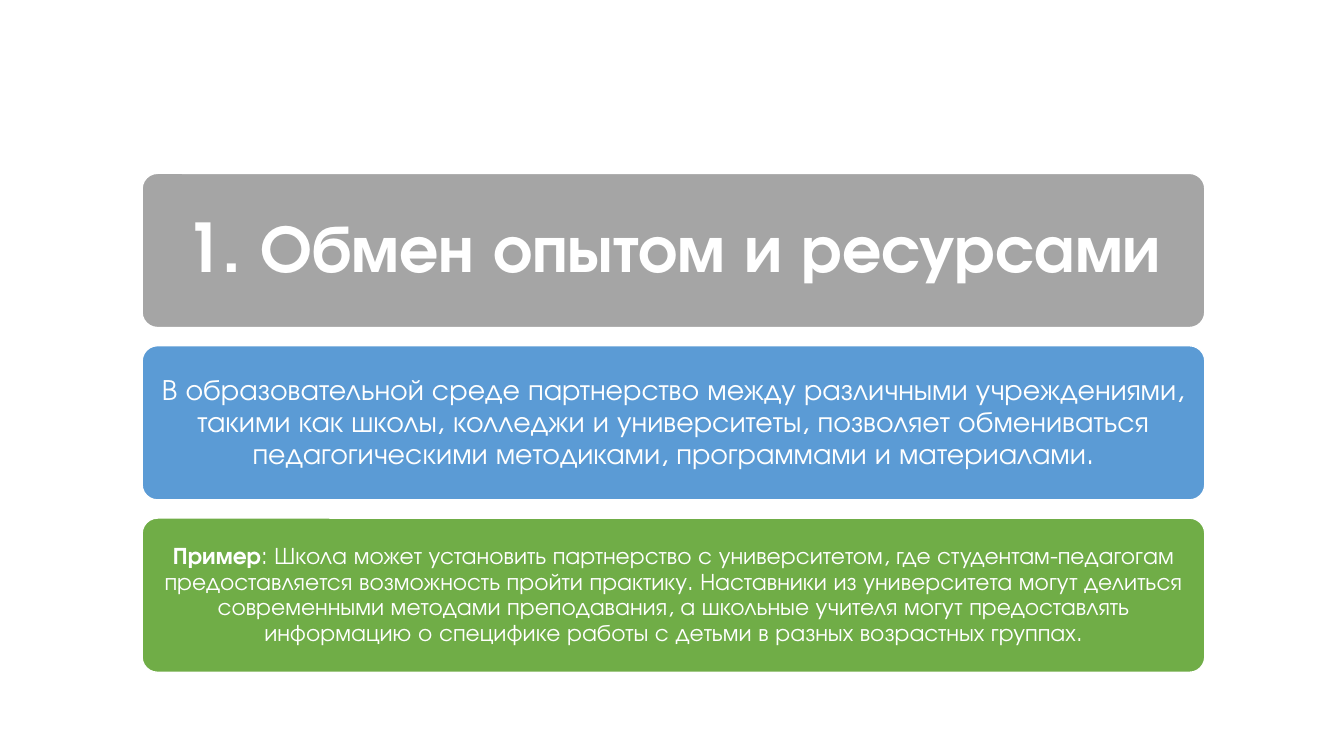
from pptx import Presentation
from pptx.dml.color import RGBColor
from pptx.enum import shapes, text
from pptx.util import Inches, Pt

WHITE = RGBColor(0xFF, 0xFF, 0xFF)
GRAY = RGBColor(0xA5, 0xA5, 0xA5)
BLUE = RGBColor(0x5B, 0x9B, 0xD5)
GREEN = RGBColor(0x70, 0xAD, 0x47)
FONT = "TeX Gyre Adventor"

CARD_LEFT, CARD_TOP = 1.41, 1.72
CARD_WIDTH, CARD_HEIGHT = 10.54, 1.53
CARD_STEP = 1.71
TITLE_INSET = 0.05


def write_text(frame, runs, size, margin):
    """Fill a frame with one centred paragraph of (wording, bold) runs."""
    frame.word_wrap = True
    frame.auto_size = text.MSO_AUTO_SIZE.NONE
    frame.vertical_anchor = text.MSO_ANCHOR.MIDDLE
    frame.margin_left = frame.margin_right = Inches(margin)
    frame.margin_top = frame.margin_bottom = Inches(margin)
    paragraph = frame.paragraphs[0]
    paragraph.alignment = text.PP_ALIGN.CENTER
    paragraph.line_spacing = 0.9
    paragraph.space_before = Pt(0)
    paragraph.font.name = FONT
    paragraph.font.size = Pt(size)
    paragraph.font.color.rgb = WHITE
    for wording, bold in runs:
        run = paragraph.add_run()
        run.text = wording
        run.font.name = FONT
        run.font.size = Pt(size)
        run.font.bold = bold
        run.font.color.rgb = WHITE


presentation = Presentation()
presentation.slide_width = Inches(13.33)
presentation.slide_height = Inches(7.5)
slide = presentation.slides.add_slide(presentation.slide_layouts[5])

# Three equal cards, stacked at a fixed step
cards = []
for index, color in enumerate((GRAY, BLUE, GREEN)):
    card = slide.shapes.add_shape(
        shapes.MSO_SHAPE.ROUNDED_RECTANGLE,
        Inches(CARD_LEFT), Inches(CARD_TOP + index * CARD_STEP),
        Inches(CARD_WIDTH), Inches(CARD_HEIGHT))
    card.adjustments[0] = 0.1
    card.shadow.inherit = False
    card.fill.solid()
    card.fill.fore_color.rgb = color
    card.line.color.rgb = WHITE
    card.line.width = Pt(1)
    cards.append(card)
heading_card, idea_card, example_card = cards

# The title sits in front of the heading card
title = slide.shapes.title
title.left = Inches(CARD_LEFT + TITLE_INSET)
title.top = Inches(CARD_TOP + TITLE_INSET)
title.width = Inches(CARD_WIDTH - 2 * TITLE_INSET)
title.height = Inches(CARD_HEIGHT - 2 * TITLE_INSET)
heading_card.element.addnext(title.element)
write_text(title.text_frame, [("1. Обмен опытом и ресурсами", True)], 48, 0.2)

write_text(idea_card.text_frame, [
    ("В образовательной среде партнерство между различными учреждениями, "
     "такими как школы, колледжи и университеты, позволяет обмениваться "
     "педагогическими методиками, программами и материалами.", False),
], 21, 0.09)

write_text(example_card.text_frame, [
    ("Пример", True),
    (": Школа может установить партнерство с университетом, где "
     "студентам-педагогам предоставляется возможность пройти практику. "
     "Наставники из университета могут делиться современными методами "
     "преподавания, а школьные учителя могут предоставлять информацию о "
     "специфике работы с детьми в разных возрастных группах.", False),
], 17, 0.07)

presentation.save("out.pptx")
